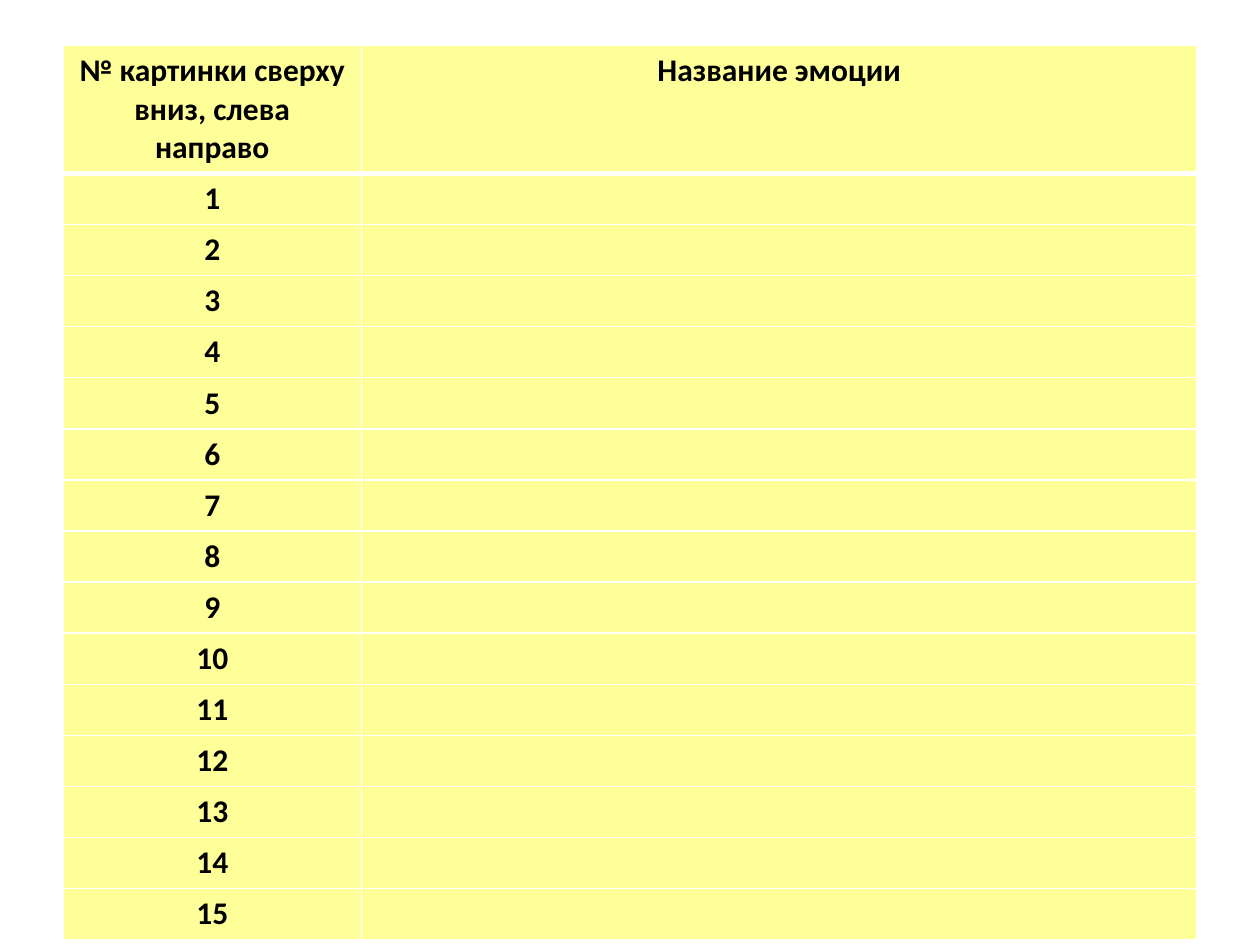
from lxml import etree
from pptx import Presentation
from pptx import util as u
from pptx.dml.color import RGBColor
from pptx.enum import text
from pptx.oxml.ns import qn

# Content
HEADINGS = ("№ картинки сверху вниз, слева направо", "Название эмоции")
PICTURE_COUNT = 15
ROWS = [HEADINGS] + [(str(n), "") for n in range(1, PICTURE_COUNT + 1)]

# Layout in inches, line widths in points
SLIDE_W, SLIDE_H = 10, 7.5
LEFT, TOP, WIDTH, HEIGHT = 0.5, 0.36, 9, 7
NUMBER_W = 2.37
HEADING_H, ROW_H = 0.98, 0.39
THIN, THICK = 1, 3
YELLOW, WHITE, BLACK = "FFFF99", "FFFFFF", "000000"


def color(value):
    return RGBColor.from_string(value)


def set_borders(cell, widths):
    """Put the four border lines ahead of the fill, as the schema asks."""
    props = cell._tc.get_or_add_tcPr()
    for place, (side, width) in enumerate(widths.items()):
        line = etree.Element(qn(f"a:ln{side}"), w=str(u.Pt(width)))
        fill = etree.SubElement(line, qn("a:solidFill"))
        etree.SubElement(fill, qn("a:srgbClr"), val=WHITE)
        props.insert(place, line)


def fill_cell(cell, wording, row_index):
    cell.fill.solid()
    cell.fill.fore_color.rgb = color(YELLOW)
    set_borders(cell, {"L": THIN, "R": THIN,
                       "T": THICK if row_index == 1 else THIN,
                       "B": THICK if row_index == 0 else THIN})
    paragraph = cell.text_frame.paragraphs[0]
    paragraph.alignment = text.PP_ALIGN.CENTER
    font = paragraph.font
    if wording:
        run = paragraph.add_run()
        run.text = wording
        font = run.font
    font.name, font.size, font.bold = "Calibri", u.Pt(18), True
    font.color.rgb = color(BLACK)


def main():
    prs = Presentation()
    prs.slide_width, prs.slide_height = u.Inches(SLIDE_W), u.Inches(SLIDE_H)
    slide = prs.slides.add_slide(prs.slide_layouts[6])

    # Emotion answer sheet
    frame = slide.shapes.add_table(
        len(ROWS), len(HEADINGS),
        *(u.Inches(n) for n in (LEFT, TOP, WIDTH, HEIGHT)))
    answers = frame.table
    answers.horz_banding = False
    for column, width in zip(answers.columns, (NUMBER_W, WIDTH - NUMBER_W)):
        column.width = u.Inches(width)
    for r, wordings in enumerate(ROWS):
        answers.rows[r].height = u.Inches(ROW_H if r else HEADING_H)
        for c, wording in enumerate(wordings):
            fill_cell(answers.cell(r, c), wording, r)
    frame.height = u.Inches(HEIGHT)

    prs.save("out.pptx")


if __name__ == "__main__":
    main()
